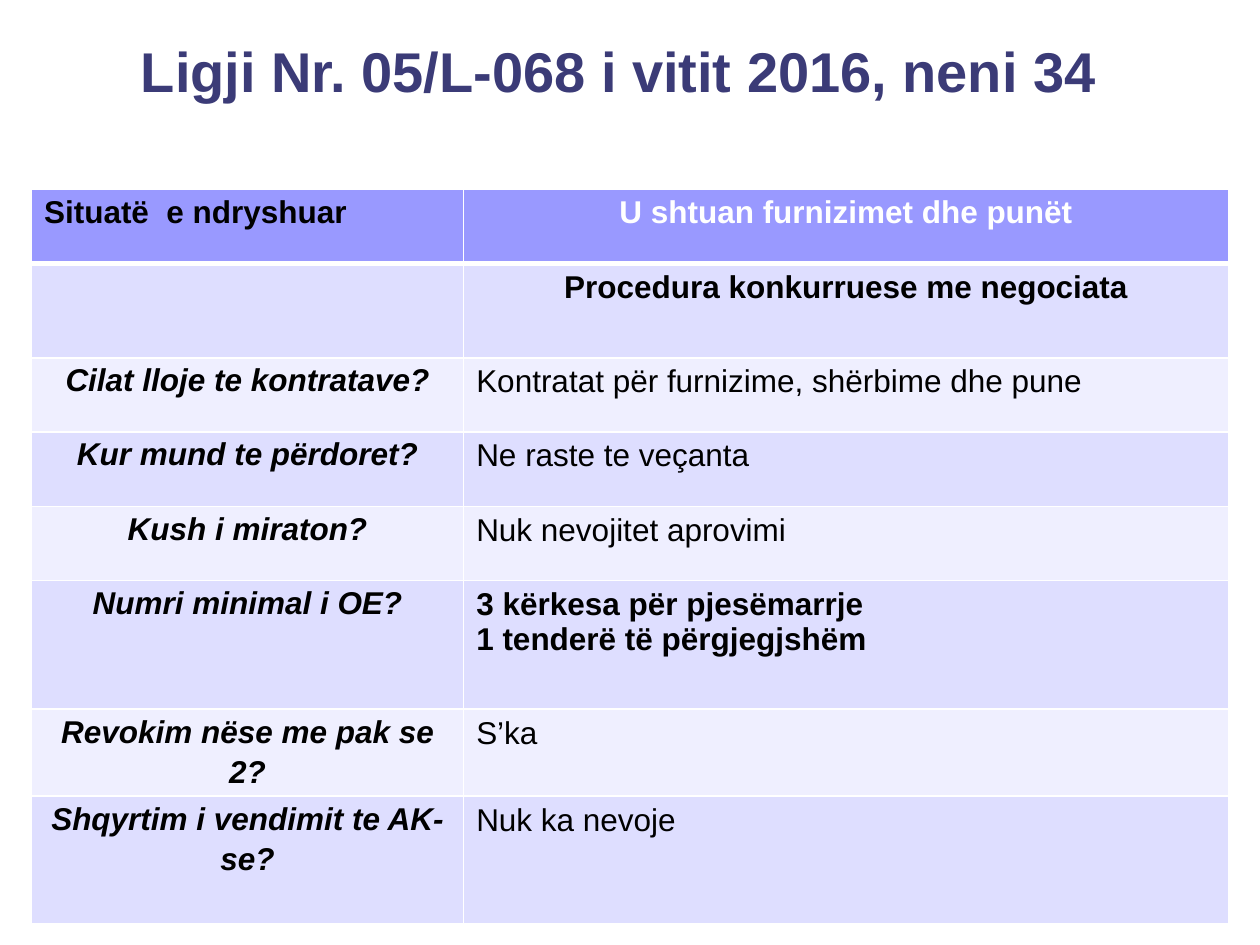
import pptx
import pptx.util
import pptx.dml.color
import pptx.enum.text
import pptx.oxml
import pptx.oxml.ns
from dataclasses import dataclass

Inches, Pt = pptx.util.Inches, pptx.util.Pt
RGB = pptx.dml.color.RGBColor.from_string
ALIGN = pptx.enum.text.PP_ALIGN


@dataclass(frozen=True)
class Theme:
    font: str = "Arial"
    title_size: int = 32
    body_size: int = 18
    title: str = "3B3B77"
    dark: str = "000000"
    light: str = "FFFFFF"
    header: str = "9999FF"
    bands: tuple = ("DEDEFF", "EFEFFF")
    border: float = 1
    header_rule: float = 3


class Deck:
    def __init__(self, prs, theme):
        self.theme = theme
        self.s = prs.slides.add_slide(prs.slide_layouts[6])

    def fill_text(self, tf, text, size, color, align=ALIGN.LEFT, bold=False,
                  italic=False, spacing=None):
        """Fill a text frame, one paragraph per line of text."""
        tf.word_wrap = True
        for i, line in enumerate(text.split("\n")):
            p = tf.paragraphs[0] if i == 0 else tf.add_paragraph()
            p.alignment = align
            if spacing:
                p.line_spacing = spacing
            r = p.add_run()
            r.text = line
            r.font.color.rgb = RGB(color)
            style = {"name": self.theme.font, "size": Pt(size),
                     "bold": bold, "italic": italic}
            for key, value in style.items():
                setattr(r.font, key, value)

    def title(self, text, box):
        sp = self.s.shapes.add_textbox(*map(Inches, box))
        self.fill_text(sp.text_frame, text, self.theme.title_size,
                       self.theme.title, ALIGN.CENTER, bold=True)

    def borders(self, cell, top, bottom):
        t = self.theme
        widths = {"lnL": t.border, "lnR": t.border, "lnT": top, "lnB": bottom}
        tc_pr = cell._tc.get_or_add_tcPr()
        for i, (tag, width) in enumerate(widths.items()):
            tc_pr.insert(i, pptx.oxml.parse_xml(
                f'<a:{tag} {pptx.oxml.ns.nsdecls("a")} w="{Pt(width)}">'
                f'<a:solidFill><a:srgbClr val="{t.light}"/></a:solidFill>'
                f'</a:{tag}>'))

    def table(self, rows, box, widths, heights):
        t = self.theme
        tbl = self.s.shapes.add_table(len(rows), len(widths),
                                      *map(Inches, box)).table
        for col, width in zip(tbl.columns, widths):
            col.width = Inches(width)
        for i, (row, height) in enumerate(zip(rows, heights)):
            tbl.rows[i].height = Inches(height)
            for j, (text, style) in enumerate(row):
                cell = tbl.cell(i, j)
                cell.fill.solid()
                cell.fill.fore_color.rgb = RGB(
                    t.bands[(i - 1) % 2] if i else t.header)
                self.borders(cell, t.header_rule if i == 1 else t.border,
                             t.header_rule if i == 0 else t.border)
                if style.get("italic"):
                    margins = {"left": 0.07, "right": 0.07, "top": 0, "bottom": 0}
                    for side, value in margins.items():
                        setattr(cell, f"margin_{side}", Inches(value))
                if text:
                    self.fill_text(cell.text_frame, text, t.body_size,
                                   **{"color": t.dark, **style})


def main():
    prs = pptx.Presentation()
    prs.slide_width, prs.slide_height = Inches(10), Inches(7.5)
    theme = Theme()
    deck = Deck(prs, theme)

    # Title
    deck.title("Ligji Nr. 05/L-068 i vitit 2016, neni 34", (0.5, 0.24, 8.83, 1.01))

    # Cell styles
    plain = {}
    bold = {"bold": True}
    heading = {"bold": True, "align": ALIGN.CENTER}
    white_heading = {**heading, "color": theme.light}
    question = {**heading, "italic": True, "spacing": 1.15}

    # Header rows, then one question and answer per row
    rows = [
        [("Situatë  e ndryshuar", bold),
         ("U shtuan furnizimet dhe punët", white_heading)],
        [("", plain), ("Procedura konkurruese me negociata", heading)],
    ]
    answers = [
        ("Cilat lloje te kontratave?", "Kontratat për furnizime, shërbime dhe pune", plain),
        ("Kur mund te përdoret?", "Ne raste te veçanta", plain),
        ("Kush i miraton?", "Nuk nevojitet aprovimi", plain),
        ("Numri minimal i OE?",
         "3 kërkesa për pjesëmarrje\n1 tenderë të përgjegjshëm", bold),
        ("Revokim nëse me pak se 2?", "S’ka", plain),
        ("Shqyrtim i vendimit te AK-se?", "Nuk ka nevoje", plain),
    ]
    rows += [[(ask, question), (reply, style)] for ask, reply, style in answers]
    deck.table(rows, (0.25, 1.5, 9.5, 5.84), (3.43, 6.07),
               (0.59, 0.75, 0.59, 0.59, 0.59, 1.02, 0.64, 1.01))

    prs.save("out.pptx")


if __name__ == "__main__":
    main()
